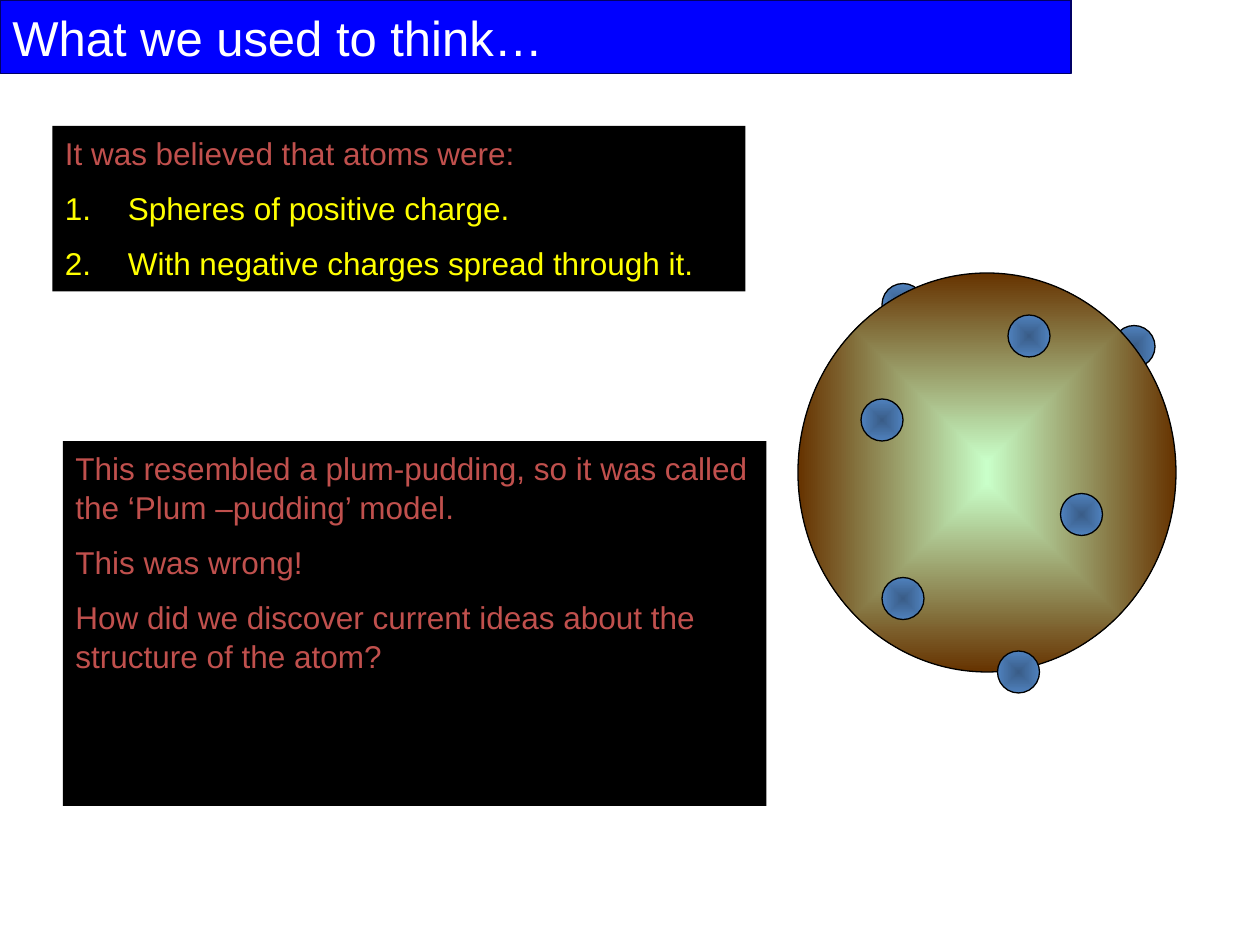
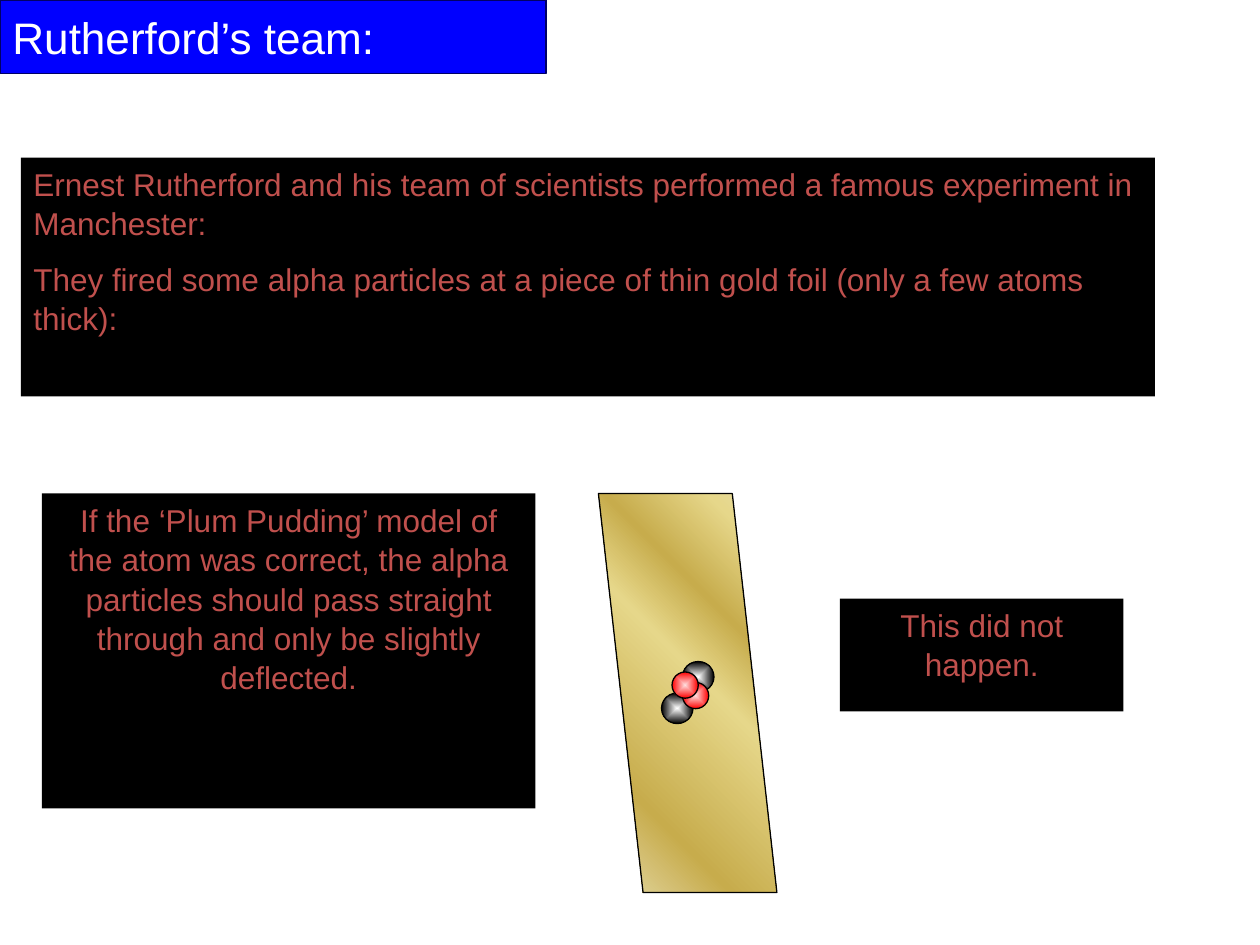
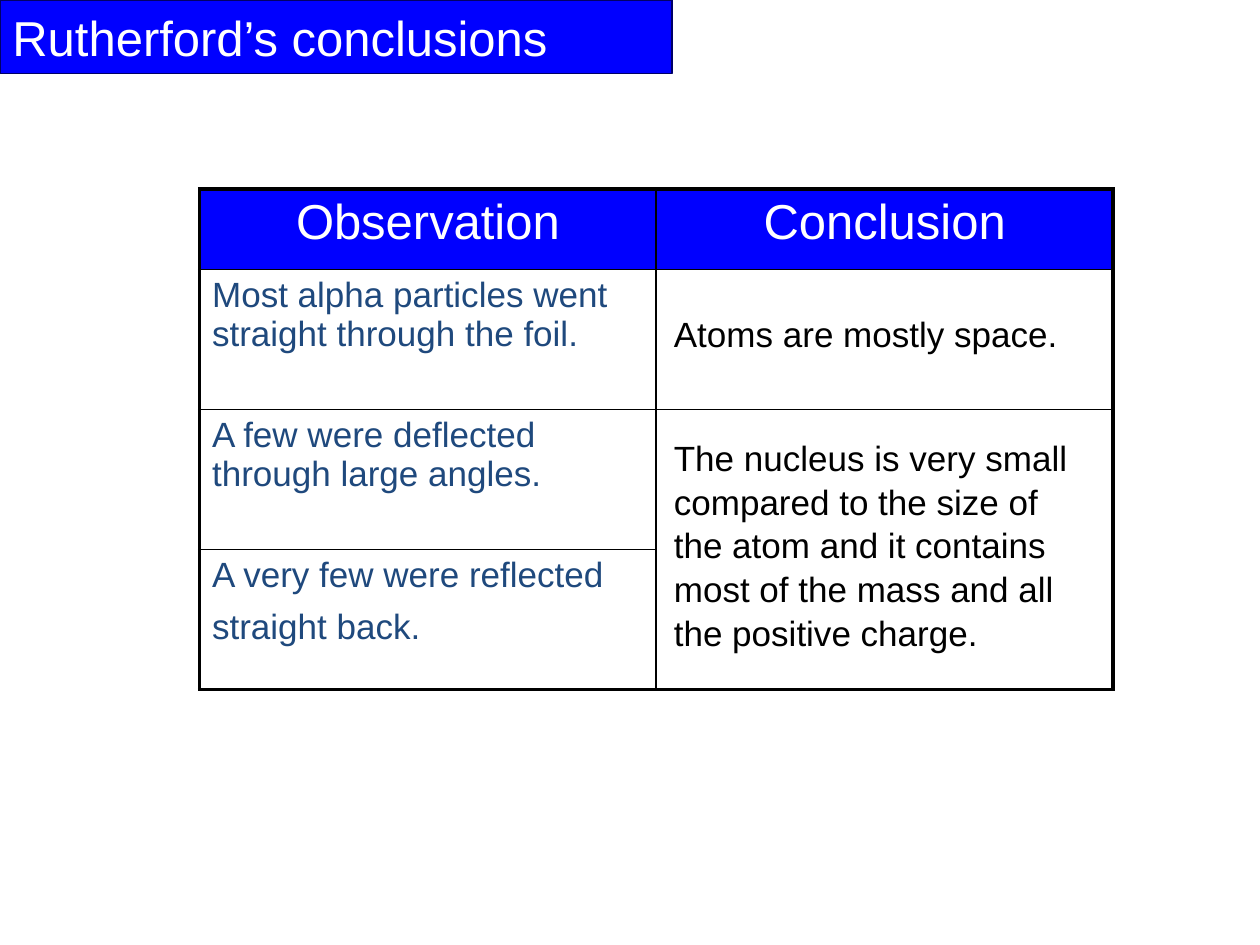
from pptx import Presentation
from pptx.dml.color import RGBColor
from pptx.enum.shapes import MSO_SHAPE
from pptx.enum.text import MSO_ANCHOR, PP_ALIGN
from pptx.oxml import parse_xml
from pptx.oxml.ns import nsdecls, qn
from pptx.util import Pt

RECTANGLE = MSO_SHAPE.RECTANGLE
OVAL = MSO_SHAPE.OVAL
PARALLELOGRAM = MSO_SHAPE.PARALLELOGRAM
LEFT, CENTER = PP_ALIGN.LEFT, PP_ALIGN.CENTER
TOP, MIDDLE = MSO_ANCHOR.TOP, MSO_ANCHOR.MIDDLE

FONT = "Arial"
BLUE = RGBColor(0x00, 0x00, 0xFF)
NAVY = RGBColor(0x00, 0x00, 0x66)
WHITE = RGBColor(0xFF, 0xFF, 0xFF)
BLACK = RGBColor(0x00, 0x00, 0x00)
BRICK = RGBColor(0xC0, 0x50, 0x4D)
YELLOW = RGBColor(0xFF, 0xFF, 0x00)
DARK_BLUE = RGBColor(0x1F, 0x49, 0x7D)

RADIAL = '<a:path path="shape"><a:fillToRect l="50000" t="50000" r="50000" b="50000"/></a:path>'
DIAGONAL = '<a:lin ang="2700000" scaled="1"/>'
ELECTRON = [(0, "395C87"), (100, "4F81BD")]
PUDDING = [(0, "C9FFC9"), (100, "663300")]
NEUTRON = [(0, "FFFFFF"), (100, "000000")]
PROTON = [(0, "FFDEDE"), (100, "FF0000")]
GOLD = [(0, "E6DCAC"), (12, "E6D78A"), (30, "C7AC4C"),
        (45, "E6D78A"), (77, "C7AC4C"), (100, "E6DCAC")]

TITLE_HEIGHT = 42
BODY_SIZE, TABLE_SIZE, HEAD_SIZE = 18, 20, 28

BELIEFS_INTRO = "It was believed that atoms were:"
BELIEFS = ["Spheres of positive charge.", "With negative charges spread through it."]
PLUM_PUDDING = [
    "This resembled a plum-pudding, so it was called the ‘Plum –pudding’ model.",
    "This was wrong!",
    "How did we discover current ideas about the structure of the atom?",
]
EXPERIMENT = [
    "Ernest Rutherford and his team of scientists performed a famous experiment in Manchester:",
    "They fired some alpha particles at a piece of thin gold foil (only a few atoms thick):",
]
PREDICTION = ["If the ‘Plum Pudding’ model of the atom was correct, the alpha particles "
              "should pass straight through and only be slightly deflected."]
OUTCOME = ["This did not happen."]

ELECTRON_DIAMETER = 24
BACK_ELECTRONS = [(504, 162), (636, 186)]
FRONT_ELECTRONS = [(492, 228), (576, 180), (606, 282), (504, 330), (570, 372)]
ALPHA_PARTICLE = [
    (378, 396, 18, 17.5, NEUTRON),
    (390, 378, 18, 17.5, NEUTRON),
    (390, 390, 15, 15, PROTON),
    (384, 384, 15, 15, PROTON),
]

HEADINGS = ["Observation", "Conclusion"]
OBSERVATIONS = [
    "Most alpha particles went straight through the foil.",
    "A few were deflected through large angles.",
    "A very few were reflected straight back.",
]
CONCLUSIONS = [
    ("Atoms are mostly space.", (378, 174, 246, 31)),
    ("The nucleus is very small compared to the size of the atom and it contains "
     "most of the mass and all the positive charge.", (378, 245, 252, 127.5)),
]
TABLE_FRAME = (114, 108, 522, 286)
HEAD_HEIGHT, ROW_HEIGHT = 46, 80
OUTER, INNER = 2.25, 1


def add_span(para, text, size, color):
    span = para.add_run()
    span.text = text
    span.font.name = FONT
    span.font.size = Pt(size)
    span.font.color.rgb = color


def add_shape(shapes, kind, frame, line=None):
    shape = shapes.add_shape(kind, *map(Pt, frame))
    shape.shadow.inherit = False
    if line is None:
        shape.line.fill.background()
    else:
        shape.line.color.rgb = line
        shape.line.width = Pt(0.75)
    return shape


def set_gradient(shape, stops, direction):
    shape.fill.background()
    marks = "".join(f'<a:gs pos="{pos * 1000}"><a:srgbClr val="{color}"/></a:gs>'
                    for pos, color in stops)
    properties = shape.element.spPr
    properties.replace(properties.find(qn("a:noFill")), parse_xml(
        f'<a:gradFill {nsdecls("a")} rotWithShape="1"><a:gsLst>{marks}</a:gsLst>'
        f'{direction}</a:gradFill>'))


def add_ball(shapes, frame, stops):
    set_gradient(add_shape(shapes, OVAL, frame, BLACK), stops, RADIAL)


def fill_text(frame, texts, size, color, align=LEFT):
    frame.word_wrap = True
    frame.vertical_anchor = TOP
    for index, text in enumerate(texts):
        para = frame.add_paragraph() if index else frame.paragraphs[0]
        para.alignment = align
        para.line_spacing = 1.04
        if index:
            para.space_before = Pt(size / 2)
        add_span(para, text, size, color)


def add_panel(page, frame, texts, align=LEFT):
    panel = add_shape(page.shapes, RECTANGLE, frame)
    panel.fill.solid()
    panel.fill.fore_color.rgb = BLACK
    fill_text(panel.text_frame, texts, BODY_SIZE, BRICK, align)
    return panel


def add_page(deck, title, width, size=HEAD_SIZE):
    page = deck.slides.add_slide(deck.slide_layouts[6])
    band = add_shape(page.shapes, RECTANGLE, (0, 0, width, TITLE_HEIGHT), NAVY)
    band.fill.solid()
    band.fill.fore_color.rgb = BLUE
    band.text_frame.word_wrap = True
    band.text_frame.vertical_anchor = MIDDLE
    para = band.text_frame.paragraphs[0]
    para.alignment = LEFT
    add_span(para, title, size, WHITE)
    return page


def number_paragraphs(paras):
    for index, para in enumerate(paras):
        properties = para._p.get_or_add_pPr()
        properties.set("marL", str(Pt(36)))
        properties.set("indent", str(-Pt(36)))
        if index:
            properties.append(parse_xml(
                f'<a:buAutoNum {nsdecls("a")} type="arabicPeriod"/>'))


def build_old_model(deck):
    page = add_page(deck, "What we used to think…", 612)
    beliefs = add_panel(page, (30, 72, 396, 94.5), [BELIEFS_INTRO, *BELIEFS])
    paras = beliefs.text_frame.paragraphs
    number_paragraphs(paras)
    for para in paras[1:]:
        para.runs[0].font.color.rgb = YELLOW
    add_panel(page, (36, 252, 402, 208.5), PLUM_PUDDING)

    def add_electrons(places):
        for left, top in places:
            add_ball(page.shapes, (left, top, ELECTRON_DIAMETER, ELECTRON_DIAMETER), ELECTRON)

    add_electrons(BACK_ELECTRONS)
    add_ball(page.shapes, (456, 156, 216, 228), PUDDING)
    add_electrons(FRONT_ELECTRONS)


def build_experiment(deck):
    page = add_page(deck, "Rutherford’s team:", 312, 25.2)
    add_panel(page, (12, 90, 648, 136.5), EXPERIMENT)
    foil = add_shape(page.shapes, PARALLELOGRAM, (342, 282, 102, 228), BLACK)
    foil.adjustments[0] = 0.25
    foil.element.spPr.xfrm.set("flipH", "1")
    set_gradient(foil, GOLD, DIAGONAL)
    add_panel(page, (24, 282, 282, 180), PREDICTION, CENTER)
    add_panel(page, (480, 342, 162, 64.5), OUTCOME, CENTER)
    particle = page.shapes.add_group_shape()
    for *frame, stops in ALPHA_PARTICLE:
        add_ball(particle.shapes, frame, stops)


def set_borders(cell, widths):
    properties = cell._tc.get_or_add_tcPr()
    for index, (edge, width) in enumerate(zip(("lnL", "lnR", "lnT", "lnB"), widths)):
        paint = f'<a:solidFill><a:srgbClr val="{BLACK}"/></a:solidFill>' if width else "<a:noFill/>"
        properties.insert(index, parse_xml(
            f'<a:{edge} {nsdecls("a")} w="{Pt(width)}">{paint}</a:{edge}>'))


def build_conclusions(deck):
    page = add_page(deck, "Rutherford’s conclusions", 384)
    rows = [HEADINGS] + [[text, ""] for text in OBSERVATIONS]
    last = len(rows) - 1
    table = page.shapes.add_table(len(rows), 2, *map(Pt, TABLE_FRAME)).table
    for row_index, texts in enumerate(rows):
        heading = row_index == 0
        table.rows[row_index].height = Pt(HEAD_HEIGHT if heading else ROW_HEIGHT)
        for column, text in enumerate(texts):
            cell = table.cell(row_index, column)
            cell.fill.solid()
            cell.fill.fore_color.rgb = BLUE if heading else WHITE
            above = OUTER if heading else INNER
            below = OUTER if row_index == last else INNER
            if column and row_index == last:
                above = 0
            if column and row_index == last - 1:
                below = 0
            set_borders(cell, (INNER if column else OUTER, OUTER if column else INNER,
                               above, below))
            if text:
                para = cell.text_frame.paragraphs[0]
                para.alignment = CENTER if heading else LEFT
                add_span(para, text, HEAD_SIZE if heading else TABLE_SIZE,
                         WHITE if heading else DARK_BLUE)
    add_span(table.cell(last, 0).text_frame.paragraphs[0], " ", HEAD_SIZE, DARK_BLUE)
    for text, frame in CONCLUSIONS:
        box = page.shapes.add_textbox(*map(Pt, frame))
        fill_text(box.text_frame, [text], TABLE_SIZE, BLACK)


def main():
    deck = Presentation()
    deck.slide_width, deck.slide_height = Pt(720), Pt(540)
    build_old_model(deck)
    build_experiment(deck)
    build_conclusions(deck)
    deck.save("out.pptx")


if __name__ == "__main__":
    main()
